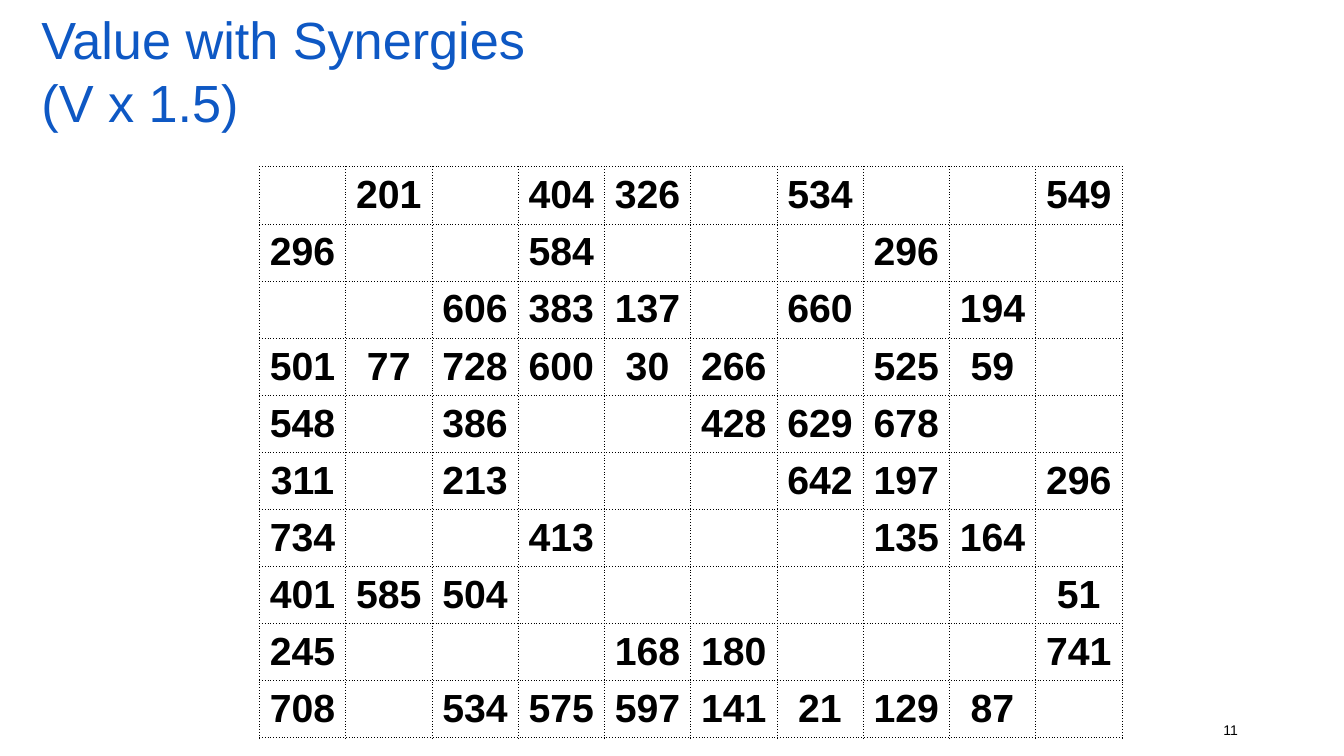
from lxml import etree
from pptx import Presentation
from pptx.dml.color import RGBColor
from pptx.enum.text import MSO_ANCHOR, PP_ALIGN
from pptx.oxml.ns import qn
from pptx.util import Inches, Pt

MIDDLE = MSO_ANCHOR.MIDDLE
LEFT, CENTER, RIGHT = PP_ALIGN.LEFT, PP_ALIGN.CENTER, PP_ALIGN.RIGHT

# Content: None marks an empty cell
TITLE = ["Value with Synergies", "(V x 1.5)"]
PAGE = "11"
VALUES = [
    [None, 201, None, 404, 326, None, 534, None, None, 549],
    [296, None, None, 584, None, None, None, 296, None, None],
    [None, None, 606, 383, 137, None, 660, None, 194, None],
    [501, 77, 728, 600, 30, 266, None, 525, 59, None],
    [548, None, 386, None, None, 428, 629, 678, None, None],
    [311, None, 213, None, None, None, 642, 197, None, 296],
    [734, None, None, 413, None, None, None, 135, 164, None],
    [401, 585, 504, None, None, None, None, None, None, 51],
    [245, None, None, None, 168, 180, None, None, None, 741],
    [708, None, 534, 575, 597, 141, 21, 129, 87, None],
]
COLORS = {"title": "0E58C4", "text": "000000", "grid": "000000"}
FONT = "Arial"


def add_run(para, text, size, color, bold=False):
    run = para.add_run()
    run.text = text
    font = run.font
    font.name, font.size, font.bold = FONT, Pt(size), bold
    font.color.rgb = RGBColor.from_string(COLORS[color])


def add_text(slide, box, lines, size, color, align, insets):
    frame = slide.shapes.add_textbox(*map(Inches, box)).text_frame
    frame.word_wrap = True
    frame.vertical_anchor = MIDDLE
    frame.margin_top, frame.margin_bottom = map(Inches, insets)
    para = frame.paragraphs[0]
    para.alignment = align
    for i, line in enumerate(lines):
        if i:
            para.add_line_break()
        add_run(para, line, size, color)


def add_borders(cell):
    props = cell._tc.get_or_add_tcPr()
    for i, side in enumerate(("lnL", "lnR", "lnT", "lnB")):
        line = etree.Element(qn(f"a:{side}"), w=str(Pt(0.25)))
        fill = etree.SubElement(line, qn("a:solidFill"))
        etree.SubElement(fill, qn("a:srgbClr"), val=COLORS["grid"])
        etree.SubElement(line, qn("a:prstDash"), val="sysDot")
        props.insert(i, line)


def add_grid(slide, left, top, width, height):
    rows, cols = len(VALUES), len(VALUES[0])
    table = slide.shapes.add_table(
        rows, cols, Inches(left), Inches(top), Inches(width), Inches(height)
    ).table
    table.first_row = table.horz_banding = False
    for r, row in enumerate(VALUES):
        for c, value in enumerate(row):
            cell = table.cell(r, c)
            cell.fill.background()
            add_borders(cell)
            cell.vertical_anchor = MIDDLE
            cell.margin_left = cell.margin_right = Inches(0.07)
            cell.margin_top = cell.margin_bottom = Inches(0.03)
            para = cell.text_frame.paragraphs[0]
            para.alignment = CENTER
            if value is not None:
                add_run(para, str(value), 21, "text", bold=True)


def main():
    deck = Presentation()
    deck.slide_width = Inches(10)
    deck.slide_height = Inches(10 * 9 / 16)
    slide = deck.slides.add_slide(deck.slide_layouts[6])

    # Page number, value grid, title
    add_text(slide, (7.06, 5.21, 2.25, 0.3), [PAGE], 7.5, "text", RIGHT, (0.14, 0))
    add_grid(slide, 1.93, 1.24, 6.42, 4.25)
    add_text(slide, (0.21, 0.28, 7.45, 0.48), TITLE, 28, "title", LEFT, (0.1, 0.1))

    deck.save("out.pptx")


if __name__ == "__main__":
    main()
